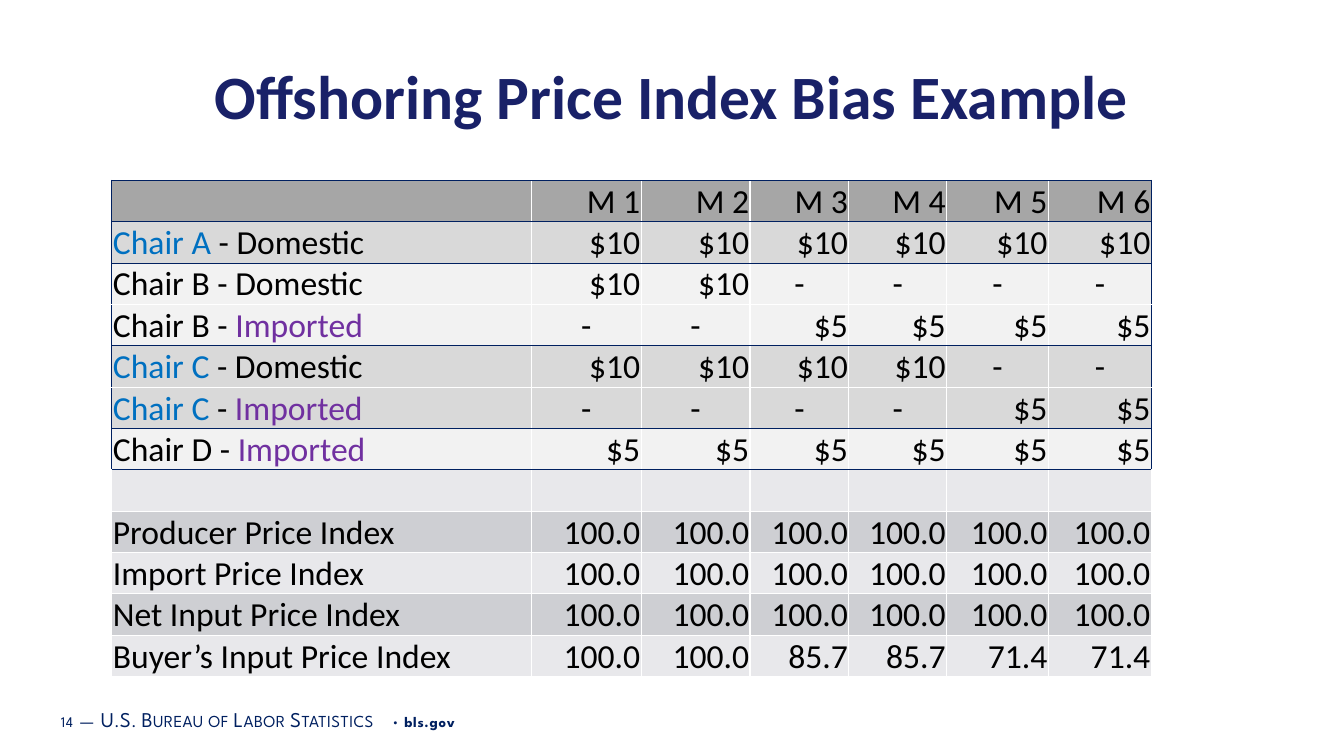
"""Build the slide on offshoring bias in price indexes."""
from lxml import etree
from pptx import Presentation, util as u
from pptx.dml.color import RGBColor
from pptx.enum import text as t
from pptx.oxml import ns

NAVY = RGBColor(0x00, 0x20, 0x60)
INDIGO = RGBColor(0x19, 0x21, 0x68)
BLUE = RGBColor(0x00, 0x70, 0xC0)
PURPLE = RGBColor(0x70, 0x30, 0xA0)
BLACK = RGBColor(0x00, 0x00, 0x00)
WHITE = RGBColor(0xFF, 0xFF, 0xFF)
HEAD = RGBColor(0xA6, 0xA6, 0xA6)
GRAY = RGBColor(0xD9, 0xD9, 0xD9)
PALE = RGBColor(0xF2, 0xF2, 0xF2)
LIGHT = RGBColor(0xE8, 0xE8, 0xEB)
DARK = RGBColor(0xCE, 0xCF, 0xD3)

WIDE, HIGH = 13.33, 7.5
ROW = 0.41
COLS = [4.16, 1.09, 1.08, 0.98, 0.97, 1.01, 1.02]
LEFT, TOP = 1.11, 1.38
GAP = 8
BODY = "Calibri"
BRAND = "League Spartan"

ROWS = [
    (None, "", []),
    (HEAD, "", ["M 1", "M 2", "M 3", "M 4", "M 5", "M 6"]),
    (GRAY, "Chair A - Domestic", ["$10"] * 6),
    (PALE, "Chair B - Domestic", ["$10"] * 2 + ["-"] * 4),
    (PALE, "Chair B - Imported", ["-"] * 2 + ["$5"] * 4),
    (GRAY, "Chair C - Domestic", ["$10"] * 4 + ["-"] * 2),
    (GRAY, "Chair C - Imported", ["-"] * 4 + ["$5"] * 2),
    (PALE, "Chair D - Imported", ["$5"] * 6),
    (LIGHT, "", []),
    (DARK, "Producer Price Index", ["100.0"] * 6),
    (LIGHT, "Import Price Index", ["100.0"] * 6),
    (DARK, "Net Input Price Index", ["100.0"] * 6),
    (LIGHT, "Buyer’s Input Price Index",
     ["100.0", "100.0", "85.7", "85.7", "71.4", "71.4"]),
]


def write(para, words, size=24, font=BODY, color=BLACK, bold=False,
          space=0, small=False):
    run = para.add_run()
    run.text = words
    run.font.size = u.Pt(size)
    run.font.name = font
    run.font.color.rgb = color
    run.font.bold = bold
    props = run.font._element
    if space:
        props.set("spc", str(round(space * 100)))
    if small:
        props.set("cap", "small")


def add_box(slide, left, top, width, height, align, pad):
    box = slide.shapes.add_textbox(*map(u.Inches, (left, top, width, height)))
    frame = box.text_frame
    frame.word_wrap = True
    frame.vertical_anchor = t.MSO_ANCHOR.MIDDLE
    frame.margin_left = frame.margin_right = u.Inches(pad)
    frame.margin_top = frame.margin_bottom = u.Inches(0.04)
    para = frame.paragraphs[0]
    para.alignment = align
    return para


def add_edge(cell, side, color):
    line = etree.SubElement(cell._tc.get_or_add_tcPr(), ns.qn("a:ln" + side))
    line.set("w", str(u.Pt(1)))
    fill = etree.SubElement(line, ns.qn("a:solidFill"))
    etree.SubElement(fill, ns.qn("a:srgbClr")).set("val", str(color))


def has_rule(row):
    return 0 <= row < GAP and ROWS[row][0] != ROWS[row + 1][0]


def style_cell(cell, row, col):
    framed = 0 < row < GAP
    edges = {
        "L": framed and col == 0,
        "R": framed and col == len(COLS) - 1,
        "T": has_rule(row - 1),
        "B": has_rule(row),
    }
    for side, rule in edges.items():
        add_edge(cell, side, NAVY if rule else WHITE)
    shade = ROWS[row][0]
    if shade is None:
        cell.fill.background()
    else:
        cell.fill.solid()
        cell.fill.fore_color.rgb = shade
    cell.vertical_anchor = t.MSO_ANCHOR.BOTTOM
    cell.margin_left = cell.margin_right = cell.margin_top = u.Inches(0.01)
    cell.margin_bottom = 0


def write_label(para, label):
    chair, dash, origin = label.partition(" - ")
    if not dash:
        write(para, label)
        return
    write(para, chair, color=BLUE if chair[-1] in "AC" else BLACK)
    write(para, dash)
    write(para, origin, color=PURPLE if origin == "Imported" else BLACK)


def add_prices(slide):
    frame = slide.shapes.add_table(
        len(ROWS), len(COLS), u.Inches(LEFT), u.Inches(TOP),
        u.Inches(sum(COLS)), u.Inches(ROW * len(ROWS)))
    table = frame.table
    table.first_row = table.horz_banding = False
    for col, width in enumerate(COLS):
        table.columns[col].width = u.Inches(width)
    for row, (_, label, prices) in enumerate(ROWS):
        table.rows[row].height = u.Inches(ROW)
        for col in range(len(COLS)):
            style_cell(table.cell(row, col), row, col)
        if label:
            write_label(table.cell(row, 0).text_frame.paragraphs[0], label)
        for col, price in enumerate(prices, 1):
            para = table.cell(row, col).text_frame.paragraphs[0]
            para.alignment = (t.PP_ALIGN.CENTER if price == "-"
                              else t.PP_ALIGN.RIGHT)
            write(para, price)


def add_footer(slide):
    para = add_box(slide, 0.04 * WIDE, 0.924 * HIGH, 0.635 * WIDE, 0.4,
                   t.PP_ALIGN.LEFT, 0.07)
    fine = dict(size=10.5, space=0.5)
    caps = dict(size=15, space=0.3, small=True)
    wide = dict(size=16, space=0.5)
    parts = [
        ("14", fine), (" ", wide), ("—", caps), (" ", wide),
        ("U.S. Bureau of Labor Statistics", caps),
        (" • ", fine), ("bls.gov", dict(fine, bold=True)),
    ]
    for words, style in parts:
        write(para, words, font=BRAND, color=NAVY, **style)


def main():
    deck = Presentation()
    deck.slide_width, deck.slide_height = u.Inches(WIDE), u.Inches(HIGH)
    slide = deck.slides.add_slide(deck.slide_layouts[6])
    add_footer(slide)
    title = add_box(slide, 0.04 * WIDE, 0.067 * HIGH, 0.92 * WIDE, 0.88,
                    t.PP_ALIGN.CENTER, 0.1)
    write(title, "Offshoring Price Index Bias Example", size=44,
          color=INDIGO, bold=True)
    add_prices(slide)
    deck.save("out.pptx")


if __name__ == "__main__":
    main()
